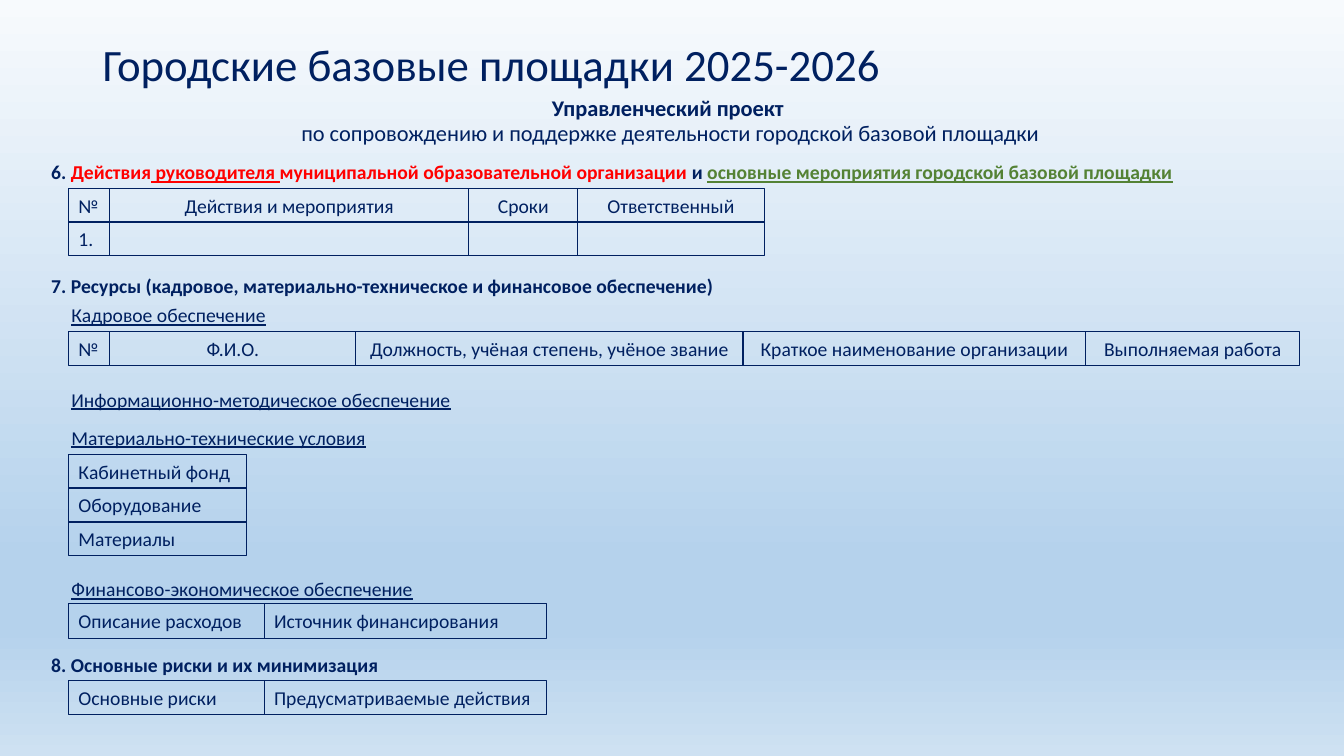
from lxml import etree
from pptx import Presentation
from pptx import util as u
from pptx.dml import color
from pptx.enum import shapes, text
from pptx.oxml import ns

NAVY, RED, GREEN = "002060", "FF0000", "548235"
LEFT, CENTER = text.PP_ALIGN.LEFT, text.PP_ALIGN.CENTER
GRID_X, ROW_H, ROW_STEP = 0.68, 0.34, 0.33


def rgb(value):
    return color.RGBColor.from_string(value)


def add_text(paragraph, words, size=14, ink=NAVY, bold=False, underline=False):
    run = paragraph.add_run()
    run.text = words
    font = run.font
    font.name, font.size = "Calibri", u.Pt(size)
    font.bold, font.underline = bold, underline
    font.color.rgb = rgb(ink)


def add_break(paragraph, size):
    paragraph.add_line_break()
    line_break = paragraph._p.findall(ns.qn("a:br"))[-1]
    etree.SubElement(line_break, ns.qn("a:rPr"), sz=str(size * 100))


class ProjectSlide:
    def __init__(self, prs):
        self.slide = prs.slides.add_slide(prs.slide_layouts[6])

    def background(self, stops):
        fill = self.slide.background.fill
        fill.gradient()
        fill.gradient_angle = 270
        stop_list = self.slide.element.find(".//" + ns.qn("a:gsLst"))
        for old in list(stop_list):
            stop_list.remove(old)
        for percent, shade in stops:
            stop = etree.SubElement(stop_list, ns.qn("a:gs"), pos=str(percent * 1000))
            etree.SubElement(stop, ns.qn("a:srgbClr"), val=shade)

    def text_frame(self, x, y, width, height, anchor):
        frame = self.slide.shapes.add_textbox(
            u.Inches(x), u.Inches(y), u.Inches(width), u.Inches(height)).text_frame
        frame.word_wrap = True
        frame.vertical_anchor = anchor
        return frame

    def title(self, words):
        frame = self.text_frame(0.92, 0.4, 11.5, 0.52, text.MSO_ANCHOR.MIDDLE)
        frame.paragraphs[0].line_spacing = 0.9
        add_text(frame.paragraphs[0], words, size=32)

    def body(self, heading, sections):
        """Sections are (space before in points, indent in inches, runs)."""
        frame = self.text_frame(0.41, 0.92, 12.48, 6.4, text.MSO_ANCHOR.TOP)
        top = frame.paragraphs[0]
        top.alignment, top.line_spacing = CENTER, 0.9
        add_text(top, heading[0], size=16, bold=True)
        add_break(top, 16)
        add_text(top, heading[1], size=16)
        for space, indent, runs in sections:
            paragraph = frame.add_paragraph()
            paragraph.line_spacing = 0.9
            paragraph.space_before = u.Pt(space)
            paragraph._p.get_or_add_pPr().set("marL", str(u.Inches(indent)))
            for words, style in runs:
                add_text(paragraph, words, **style)

    def grid(self, y, widths, rows, centered=False):
        """Outlined cells; if centered, all columns but the first are centred."""
        group = self.slide.shapes.add_group_shape()
        for r, row in enumerate(rows):
            for c, words in enumerate(row):
                align = CENTER if centered and c else LEFT
                self.cell(group, GRID_X + sum(widths[:c]), y + r * ROW_STEP,
                          widths[c], words, align)

    def cell(self, group, x, y, width, words, align):
        box = group.shapes.add_shape(
            shapes.MSO_SHAPE.RECTANGLE, u.Inches(x), u.Inches(y),
            u.Inches(width), u.Inches(ROW_H))
        box.shadow.inherit = False
        box.fill.background()
        box.line.color.rgb = rgb(NAVY)
        box.line.width = u.Pt(0.75)
        if words:
            box.text_frame.word_wrap = True
            paragraph = box.text_frame.paragraphs[0]
            paragraph.alignment = align
            add_text(paragraph, words)


def main():
    prs = Presentation()
    prs.slide_width, prs.slide_height = u.Inches(13.33), u.Inches(7.5)
    page = ProjectSlide(prs)
    page.background([(0, "F7FAFD"), (74, "B5D2EC"), (83, "B5D2EC"), (100, "CEE1F2")])

    # Title, project name and numbered sections
    bold, under = {"bold": True}, {"underline": True}
    red = {"bold": True, "ink": RED}
    page.title("Городские базовые площадки 2025-2026")
    page.body(
        ("Управленческий проект ",
         "по сопровождению и поддержке деятельности городской базовой площадки"),
        [
            (12, 0, [
                ("6. ", bold), ("Действия", red),
                (" руководителя ", {**red, **under}),
                ("муниципальной образовательной организации ", red), ("и ", bold),
                ("основные мероприятия городской базовой площадки",
                 {**bold, **under, "ink": GREEN})]),
            (66, 0, [("7. Ресурсы (кадровое, материально-техническое "
                      "и финансовое обеспечение)", bold)]),
            (6, 0.2, [("Кадровое обеспечение", under)]),
            (45, 0.2, [("Информационно-методическое обеспечение", under)]),
            (12, 0.2, [("Материально-технические условия", under)]),
            (93, 0.2, [("Финансово-экономическое обеспечение", under)]),
            (39, 0, [("8. Основные риски и их минимизация", bold)]),
        ])

    # Staff
    page.grid(3.29, [0.41, 2.44, 3.84, 3.4, 2.12], [
        ["№", "Ф.И.О.", "Должность, учёная степень, учёное звание",
         "Краткое наименование организации", "Выполняемая работа"],
    ], centered=True)

    # Facilities, finance and risks
    page.grid(4.51, [1.77], [["Кабинетный фонд"], ["Оборудование"], ["Материалы"]])
    page.grid(5.99, [1.94, 2.8], [["Описание расходов", "Источник финансирования"]])
    page.grid(6.75, [1.94, 2.8], [["Основные риски", "Предусматриваемые действия"]])

    # Actions and events
    page.grid(1.87, [0.41, 3.56, 1.08, 1.85], [
        ["№", "Действия и мероприятия", "Сроки", "Ответственный"],
        ["1.", "", "", ""],
    ], centered=True)

    prs.save("out.pptx")


if __name__ == "__main__":
    main()
